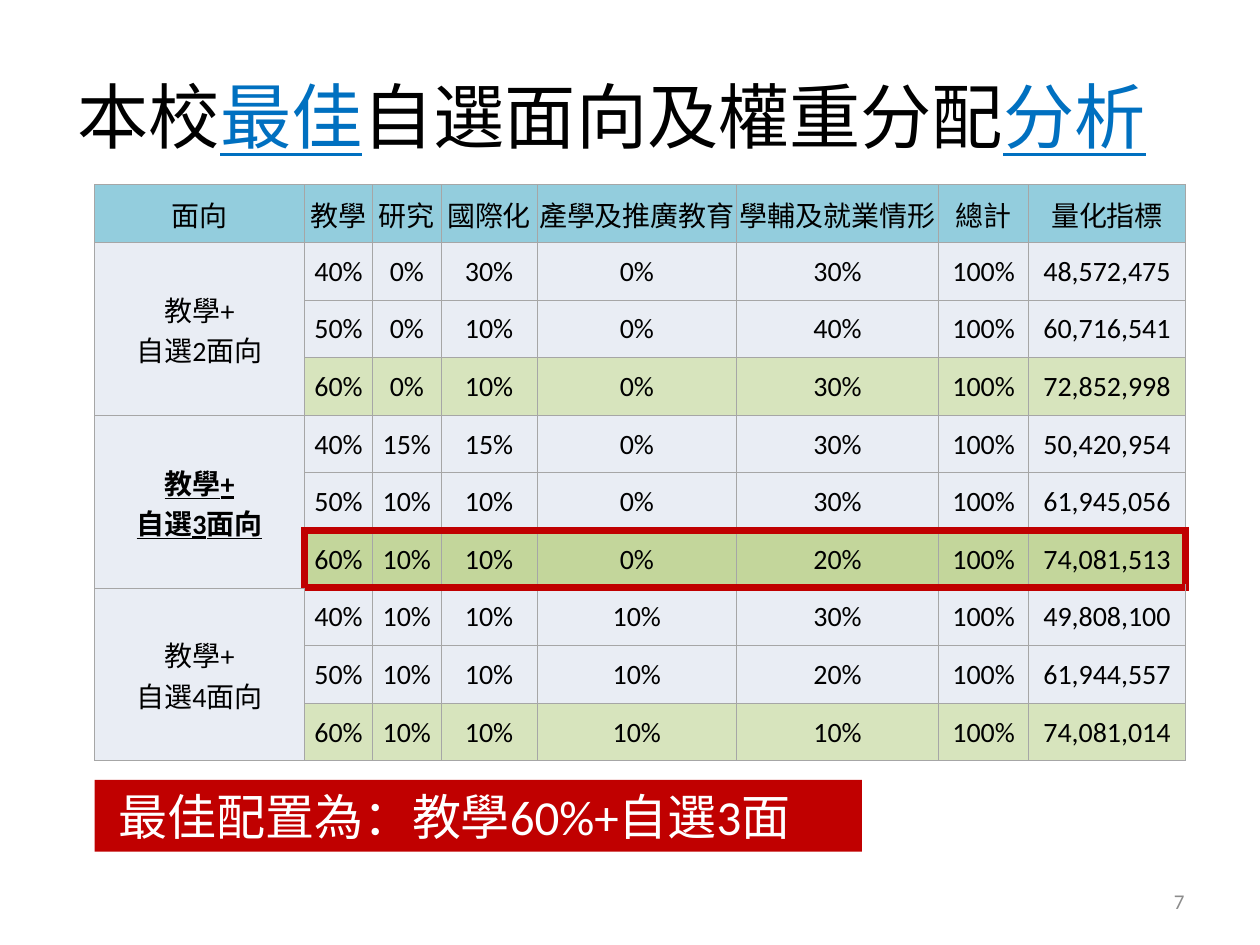
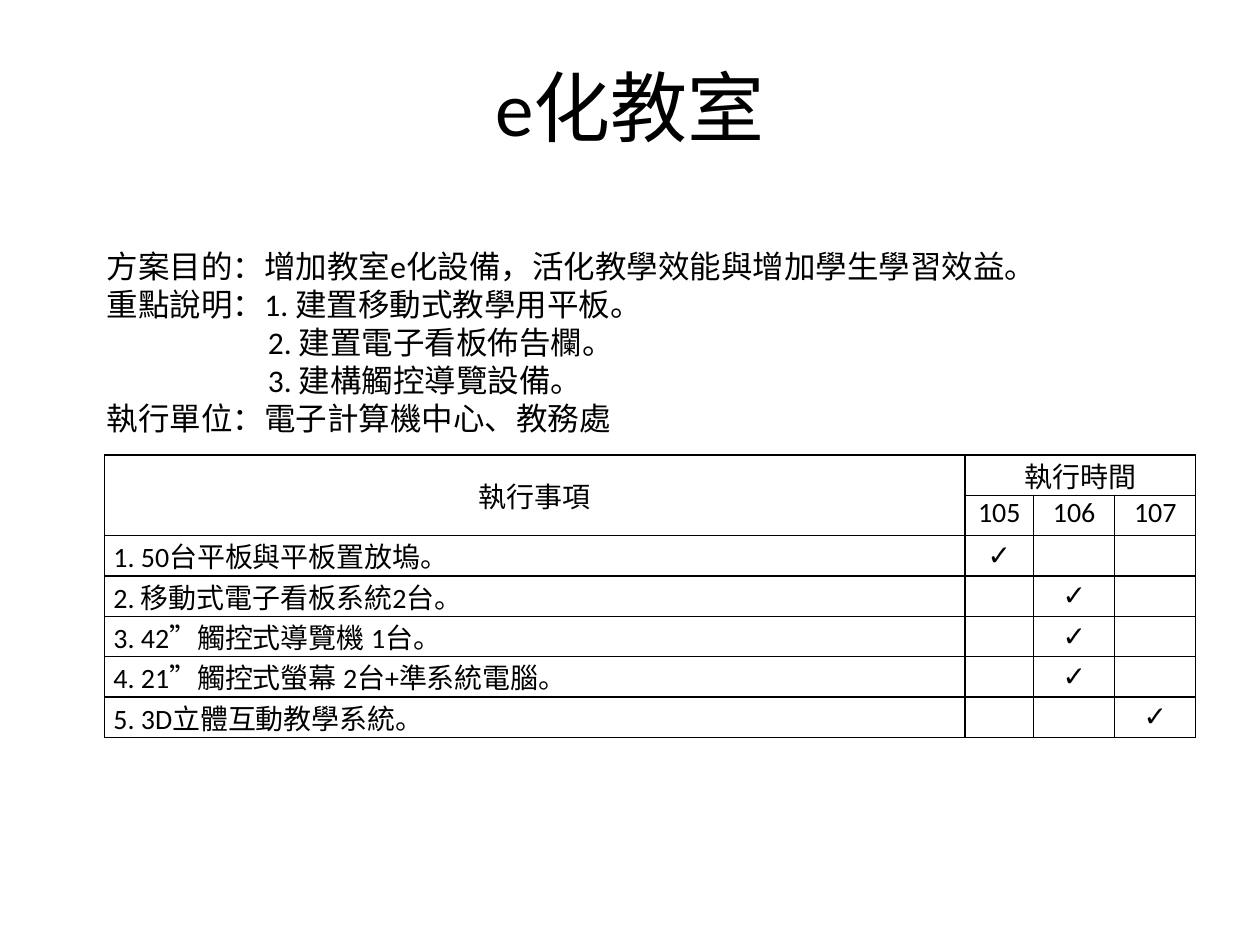
"""Build two slides on weighting analysis and e-classroom planning."""
from pptx import Presentation
from pptx import util as u
from pptx.dml import color
from pptx.enum import shapes, text
from pptx.oxml import ns
from lxml import etree

Pt = u.Pt
FONT = "Calibri"
COLORS = {
    "black": "000000", "white": "FFFFFF", "gray": "8C8C8C", "rule": "A6A6A6",
    "blue": "0070C0", "red": "C00000", "header": "93CDDD", "body": "E9EDF4",
    "green": "D7E4BD", "best": "C3D69B",
}
LEFT, CENTER, RIGHT = text.PP_ALIGN.LEFT, text.PP_ALIGN.CENTER, text.PP_ALIGN.RIGHT
TOP, MIDDLE = text.MSO_ANCHOR.TOP, text.MSO_ANCHOR.MIDDLE


def rgb(name):
    return color.RGBColor.from_string(COLORS[name])


class Deck:
    def __init__(self):
        self.prs = Presentation()
        self.prs.slide_width, self.prs.slide_height = Pt(720), Pt(540)
        self.s = None

    def slide(self):
        self.s = self.prs.slides.add_slide(self.prs.slide_layouts[6])

    def style(self, p, size, ink="black", align=LEFT):
        p.alignment = align
        p.font.name, p.font.size = FONT, Pt(size)
        p.font.color.rgb = rgb(ink)

    def text(self, box, lines, size, ink="black", align=LEFT, spacing=None):
        sp = self.s.shapes.add_textbox(*map(Pt, box))
        tf = sp.text_frame
        tf.word_wrap, tf.vertical_anchor = True, MIDDLE
        for i, (line, indent) in enumerate(lines):
            p = tf.add_paragraph() if i else tf.paragraphs[0]
            p.text = line
            self.style(p, size, ink, align)
            if spacing:
                p.line_spacing = Pt(spacing)
            if indent:
                p._p.get_or_add_pPr().set("marL", str(Pt(indent)))
        return tf

    def title(self, box, parts, size=44, align=CENTER):
        p = self.text(box, [("", 0)], size, align=align).paragraphs[0]
        for part, marked in parts:
            r = p.add_run()
            r.text = part
            if marked:
                r.font.color.rgb = rgb("blue")
                r.font.underline = True

    def page_number(self, number):
        self.text((516, 500.5, 168, 28.8), [(number, 0)], 12, "gray", RIGHT)

    def banner(self, box, line):
        sp = self.s.shapes.add_shape(shapes.MSO_SHAPE.RECTANGLE, *map(Pt, box))
        sp.shadow.inherit = False
        sp.fill.solid()
        sp.fill.fore_color.rgb = rgb("red")
        sp.line.fill.background()
        tf = sp.text_frame
        tf.word_wrap, tf.vertical_anchor = True, TOP
        tf.margin_left = Pt(13.7)
        p = tf.paragraphs[0]
        p.text = line
        self.style(p, 28, "white")

    def table(self, left, top, widths, height, rows, margins):
        frame = self.s.shapes.add_table(len(rows), len(widths), Pt(left), Pt(top),
                                        Pt(sum(widths)), Pt(height * len(rows)))
        tbl = frame.table
        tbl.first_row = tbl.horz_banding = False
        for col, width in zip(tbl.columns, widths):
            col.width = Pt(width)
        for row, values in zip(tbl.rows, rows):
            row.height = Pt(height)
            for c, value in zip(row.cells, values):
                c.text = value
                c.margin_left = c.margin_right = Pt(margins[0])
                c.margin_top, c.margin_bottom = Pt(margins[1]), 0
                for p in c.text_frame.paragraphs:
                    self.style(p, 16, align=CENTER)
        return tbl

    def cell(self, c, line, width, fill=None, anchor=MIDDLE, thick=""):
        c.vertical_anchor = anchor
        tc = c._tc.get_or_add_tcPr()
        for side in "LRTB":
            ink, weight = ("red", 4.5) if side in thick else (line, width)
            ln = etree.SubElement(tc, ns.qn(f"a:ln{side}"), w=str(Pt(weight)))
            solid = etree.SubElement(ln, ns.qn("a:solidFill"))
            etree.SubElement(solid, ns.qn("a:srgbClr"), val=COLORS[ink])
        if fill:
            c.fill.solid()
            c.fill.fore_color.rgb = rgb(fill)
        else:
            c.fill.background()


def weighting(d):
    d.slide()
    d.page_number("7")
    d.banner((54, 445.7, 438.5, 41), "最佳配置為：教學60%+自選3面")
    d.title((37.4, 20.9, 648, 90),
            [("本校", False), ("最佳", True), ("自選面向及權重分配", False), ("分析", True)],
            40.7, LEFT)
    header = ["面向", "教學", "研究", "國際化", "產學及推廣教育", "學輔及就業情形", "總計", "量化指標"]
    weights = [
        "40% 0% 30% 0% 30% 100% 48,572,475",
        "50% 0% 10% 0% 40% 100% 60,716,541",
        "60% 0% 10% 0% 30% 100% 72,852,998",
        "40% 15% 15% 0% 30% 100% 50,420,954",
        "50% 10% 10% 0% 30% 100% 61,945,056",
        "60% 10% 10% 0% 20% 100% 74,081,513",
        "40% 10% 10% 10% 30% 100% 49,808,100",
        "50% 10% 10% 10% 20% 100% 61,944,557",
        "60% 10% 10% 10% 10% 100% 74,081,014",
    ]
    rows = [header]
    for i, line in enumerate(weights):
        group = "" if i % 3 else f"教學+\n自選{i // 3 + 2}面向"
        rows.append([group] + line.split())
    tbl = d.table(54, 105.6, [120, 39, 39, 55, 114, 115.4, 51.6, 89.4], 32.93, rows, (0.7, 0.7))
    best, last = 6, len(header) - 1
    for i in range(len(rows)):
        for j in range(len(header)):
            thick = ""
            if j:
                thick += "T" if i in (best, best + 1) else ""
                thick += "B" if i in (best - 1, best) else ""
            if i == best:
                thick += {1: "L", last: "R"}.get(j, "")
            if i == 0:
                fill = "header"
            elif j == 0 or i % 3:
                fill = "body"
            else:
                fill = "best" if i == best else "green"
            d.cell(tbl.cell(i, j), "rule", 0.5, fill, thick=thick)
    for i in (1, 4, 7):
        tbl.cell(i, 0).merge(tbl.cell(i + 2, 0))
    for p in tbl.cell(4, 0).text_frame.paragraphs:
        p.font.bold = p.font.underline = True


def classroom(d):
    d.slide()
    d.title((36, 15.1, 648, 90), [("e化教室", False)])
    tasks = [
        ("1. 50台平板與平板置放塢。", 105),
        ("2. 移動式電子看板系統2台。", 106),
        ("3. 42”觸控式導覽機 1台。", 106),
        ("4. 21”觸控式螢幕 2台+準系統電腦。", 106),
        ("5. 3D立體互動教學系統。", 107),
    ]
    years = (105, 106, 107)
    rows = [["執行事項", "執行時間", "", ""], [""] + [str(y) for y in years]]
    rows += [[task] + ["✓" if y == due else "" for y in years] for task, due in tasks]
    tbl = d.table(59.8, 260, [491.5, 39.4, 46.3, 46.3], 23.05, rows, (5, 0))
    for i in range(len(rows)):
        for j in range(len(rows[0])):
            centred = (i > 1 and j > 0) or (i, j) == (0, 0)
            d.cell(tbl.cell(i, j), "black", 1, anchor=MIDDLE if centred else TOP)
        if i > 1:
            tbl.cell(i, 0).text_frame.paragraphs[0].alignment = LEFT
    tbl.cell(0, 0).merge(tbl.cell(1, 0))
    tbl.cell(0, 1).merge(tbl.cell(0, 3))
    d.text((54, 136.8, 580.3, 116.6), [
        ("方案目的：增加教室e化設備，活化教學效能與增加學生學習效益。", 0),
        ("重點說明：1. 建置移動式教學用平板。", 0),
        ("2. 建置電子看板佈告欄。", 92),
        ("3. 建構觸控導覽設備。", 92),
        ("執行單位：電子計算機中心、教務處", 0),
    ], 18, spacing=21.7)


def main():
    d = Deck()
    weighting(d)
    classroom(d)
    d.prs.save("out.pptx")


if __name__ == "__main__":
    main()
